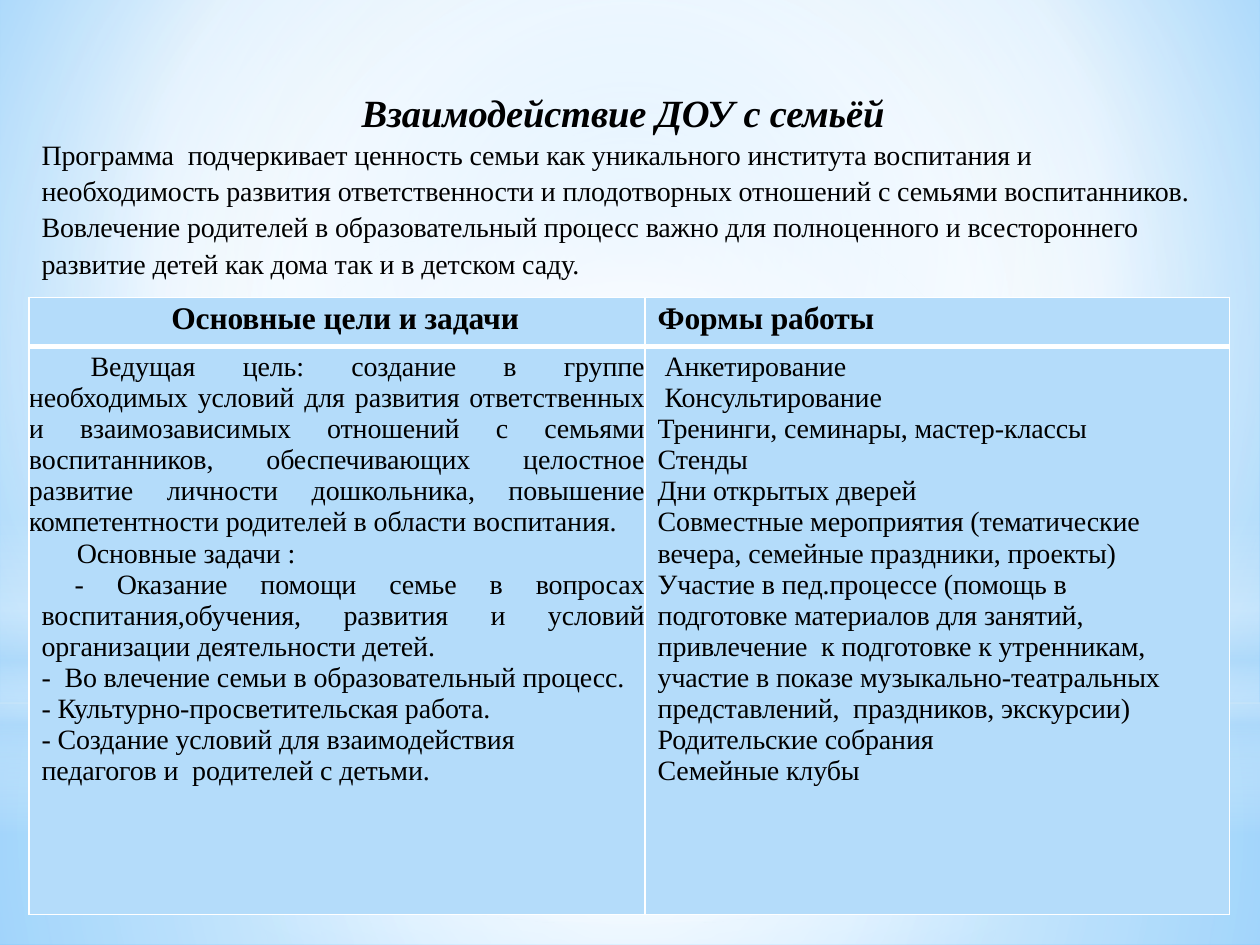
"""Build a slide on how a kindergarten works with families: title, text and a table."""
import lxml.etree
import pptx
import pptx.dml.color
import pptx.enum.shapes
import pptx.enum.text
import pptx.oxml
import pptx.oxml.ns
import pptx.util

PX = 9144
THEME = {
    "font": "Times New Roman", "ink": "000000", "cell": "B4DCFA", "white": "FFFFFF",
    "pale": "9ED5FF", "deep": "5BB9FF", "title": 22, "head": 18, "text": 16,
}
ALIGN = pptx.enum.text.PP_ALIGN
KIND = pptx.enum.shapes.MSO_SHAPE
qn = pptx.oxml.ns.qn
rgb = pptx.dml.color.RGBColor.from_string


def paint(host, stops, shade):
    """Replace the solid fill of host by a gradient."""
    marks = "".join(
        f'<a:gs pos="{pos * 1000}"><a:srgbClr val="{THEME[tone]}">'
        f'<a:alpha val="{alpha * 1000}"/></a:srgbClr></a:gs>'
        for pos, tone, alpha in stops)
    if shade:
        sides = " ".join(f'{side}="{val * 1000}"' for side, val in zip("ltrb", shade))
        way = f'<a:path path="circle"><a:fillToRect {sides}/></a:path>'
    else:
        way = '<a:lin ang="5400000" scaled="0"/>'
    grad = pptx.oxml.parse_xml(
        f'<a:gradFill {pptx.oxml.ns.nsdecls("a")} rotWithShape="1">'
        f'<a:gsLst>{marks}</a:gsLst>{way}</a:gradFill>')
    host.replace(host.find(qn("a:solidFill")), grad)


def write(frame, rows, size, bold=False, italic=False, space=1.0):
    """Fill a frame with rows of text, alignment, left, first-line and right indent."""
    for i, (text, align, left, first, right) in enumerate(rows):
        para = frame.paragraphs[0] if i == 0 else frame.add_paragraph()
        form = {"alignment": align, "line_spacing": space,
                "space_before": pptx.util.Pt(0), "space_after": pptx.util.Pt(0)}
        for key, val in form.items():
            setattr(para, key, val)
        props = para._p.get_or_add_pPr()
        for key, val in {"marL": left, "indent": first, "marR": right}.items():
            props.set(key, str(val * PX))
        lxml.etree.SubElement(props, qn("a:buNone"))
        run = para.add_run()
        run.text = text
        face = {"name": THEME["font"], "size": pptx.util.Pt(size),
                "bold": bold, "italic": italic}
        for key, val in face.items():
            setattr(run.font, key, val)
        run.font.color.rgb = rgb(THEME["ink"])
        run._r.get_or_add_rPr().set("spc", "-5")


deck = pptx.Presentation()
deck.slide_width, deck.slide_height = 1000 * PX, 750 * PX
slide = deck.slides.add_slide(deck.slide_layouts[1])

slide.background.fill.solid()
paint(slide._element.find(".//" + qn("p:bgPr")),
      [(0, "pale", 100), (60, "white", 100), (100, "deep", 100)], (20, 10, 20, 60))

MID = (50, 50, 50, 50)
glows = [
    (KIND.RECTANGLE, 558, 192, MID,
     [(0, "white", 91), (37, "white", 76), (100, "cell", 79)]),
    (KIND.RECTANGLE, 0, 558, MID,
     [(0, "white", 89), (48, "white", 62), (100, "cell", 79)]),
    (KIND.RECTANGLE, 412, 250, None,
     [(0, "white", 0), (29, "white", 30), (45, "cell", 40),
      (55, "white", 26), (65, "cell", 60), (100, "white", 0)]),
    (KIND.OVAL, 175, 558, MID, [(0, "white", 100), (56, "white", 0)]),
]
tree = slide.shapes._spTree
for spot, (kind, top, high, shade, stops) in enumerate(glows, 2):
    glow = slide.shapes.add_shape(kind, 0, top * PX, 1000 * PX, high * PX)
    glow.shadow.inherit = False
    glow.line.fill.background()
    glow.fill.solid()
    paint(glow._element.spPr, stops, shade)
    tree.insert(spot, glow._element)

intro = [
    "Программа  подчеркивает ценность семьи как уникального института воспитания и "
    "необходимость развития ответственности и плодотворных отношений с семьями воспитанников.",
    "Вовлечение родителей в образовательный процесс важно для полноценного и всестороннего",
    "развитие детей как дома так и в детском саду.",
]
blocks = [
    (slide.shapes.title, 67, 39, "title", True,
     [("Взаимодействие ДОУ с семьёй", ALIGN.CENTER, 1, 0, 0)]),
    (slide.placeholders[1], 106, 108, "text", False,
     [(text, ALIGN.LEFT, 1, 0, 0) for text in intro]),
]
for box, top, high, size, strong, rows in blocks:
    place = {"left": 32, "top": top, "width": 924, "height": high}
    for key, val in place.items():
        setattr(box, key, val * PX)
    form = {"margin_left": 0, "margin_top": PX, "margin_right": 0, "margin_bottom": 0,
            "word_wrap": True, "auto_size": pptx.enum.text.MSO_AUTO_SIZE.NONE,
            "vertical_anchor": pptx.enum.text.MSO_ANCHOR.TOP}
    for key, val in form.items():
        setattr(box.text_frame, key, val)
    write(box.text_frame, rows, THEME[size], strong, strong, 1.08)

goals = [
    ("Ведущая цель: создание в группе необходимых условий для развития ответственных "
     "и взаимозависимых отношений с семьями воспитанников, обеспечивающих целостное "
     "развитие личности дошкольника, повышение компетентности родителей в области "
     "воспитания.", ALIGN.JUSTIFY, 0, 49, 0),
    ("Основные задачи :", ALIGN.LEFT, 10, 28, 0),
    (" - Оказание помощи семье в вопросах воспитания,обучения, развития и условий "
     "организации деятельности детей.", ALIGN.JUSTIFY, 10, 0, 0),
    ("-  Во влечение семьи в образовательный процесс.", ALIGN.LEFT, 10, 0, 0),
    ("- Культурно-просветительская работа.", ALIGN.LEFT, 10, 0, 0),
    ("- Создание условий для взаимодействия педагогов и  родителей с детьми.",
     ALIGN.LEFT, 10, 0, 35),
]
forms = [
    " Анкетирование",
    " Консультирование",
    "Тренинги, семинары, мастер-классы",
    "Стенды",
    "Дни открытых дверей",
    "Совместные мероприятия (тематические вечера, семейные праздники, проекты)",
    "Участие в пед.процессе (помощь в подготовке материалов для занятий, привлечение  "
    "к подготовке к утренникам, участие в показе музыкально-театральных "
    "представлений,  праздников, экскурсии)",
    "Родительские собрания",
    "Семейные клубы",
]
cells = [
    [[("Основные цели и задачи", ALIGN.LEFT, 113, 0, 0)],
     [("Формы работы", ALIGN.LEFT, 10, 0, 0)]],
    [goals, [(text, ALIGN.LEFT, 10, 0, 35) for text in forms]],
]
grid = slide.shapes.add_table(2, 2, 23 * PX, 236 * PX, 953 * PX, 490 * PX).table
grid.first_row = grid.horz_banding = False
for col, wide in zip(grid.columns, (489, 464)):
    col.width = wide * PX
for row, high in zip(grid.rows, (39, 451)):
    row.height = high * PX

looks = [("head", True, 3, {"L": 1, "R": 1, "T": 1, "B": 3}),
         ("text", False, 4, {"L": 1, "R": 1, "T": 3, "B": 1})]
for r, (size, bold, inset, edges) in enumerate(looks):
    for c, rows in enumerate(cells[r]):
        cell = grid.cell(r, c)
        form = {"margin_left": 0, "margin_top": inset * PX,
                "margin_right": 0, "margin_bottom": 0}
        for key, val in form.items():
            setattr(cell, key, val)
        props = cell._tc.get_or_add_tcPr()
        for side, wide in edges.items():
            edge = lxml.etree.SubElement(props, qn(f"a:ln{side}"), w=str(wide * 12700))
            fill = lxml.etree.SubElement(edge, qn("a:solidFill"))
            lxml.etree.SubElement(fill, qn("a:srgbClr"), val=THEME["white"])
        cell.fill.solid()
        cell.fill.fore_color.rgb = rgb(THEME["cell"])
        write(cell.text_frame, rows, THEME[size], bold)

deck.save("out.pptx")
